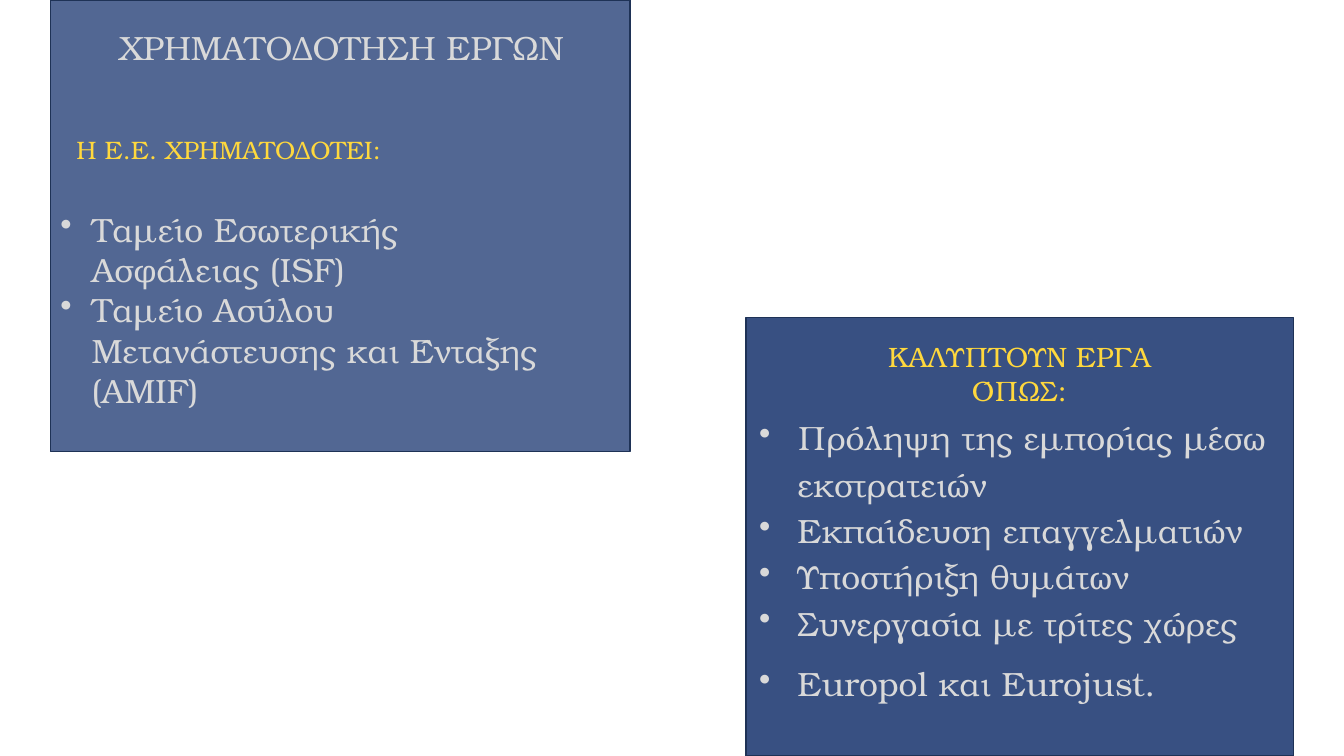
from lxml.etree import SubElement
from pptx import Presentation
from pptx.dml.color import RGBColor
from pptx.enum.shapes import MSO_SHAPE as Shape
from pptx.enum.text import MSO_AUTO_SIZE as AutoSize, PP_ALIGN as Align
from pptx.oxml.ns import qn
from pptx.util import Inches, Pt

COLOURS = {
    "panel": "002060",
    "border": "1E3256",
    "body": "D9D9D9",
    "heading": "FFD83D",
}
FONT = "TeX Gyre Bonum"
GRID = 100  # columns and rows across the slide

FUNDS = [
    "Ταμείο Εσωτερικής Ασφάλειας (ISF)",
    "Ταμείο Ασύλου Μετανάστευσης και Ένταξης (AMIF)",
]
PROJECTS = [
    "Πρόληψη της εμπορίας μέσω εκστρατειών",
    "Εκπαίδευση επαγγελματιών",
    "Υποστήριξη θυμάτων",
    "Συνεργασία με τρίτες χώρες",
    "Europol και Eurojust.",
]


def colour(name):
    return RGBColor.from_string(COLOURS[name])


def write(paragraph, text, size=24, tint="body", align=Align.LEFT,
          indent=None, line_spacing=None, space_after=0):
    """Fill a paragraph; an indent in inches also gives it a hanging bullet."""
    paragraph.alignment = align
    paragraph.space_after = Pt(space_after)
    if line_spacing:
        paragraph.line_spacing = line_spacing
    if indent:
        properties = paragraph._p.get_or_add_pPr()
        properties.set("marL", str(Inches(indent)))
        properties.set("indent", str(-Inches(indent)))
        SubElement(properties, qn("a:buChar"), char="•")
    run = paragraph.add_run()
    run.text = text
    run.font.name = FONT
    run.font.size = Pt(size)
    run.font.color.rgb = colour(tint)


class SlideBuilder:
    def __init__(self, presentation):
        self.slide = presentation.slides.add_slide(presentation.slide_layouts[6])
        self.column = presentation.slide_width / GRID
        self.row = presentation.slide_height / GRID

    def place(self, left, top, width, height):
        """Turn grid columns and rows into slide lengths."""
        return (round(left * self.column), round(top * self.row),
                round(width * self.column), round(height * self.row))

    def panel(self, *area, opacity):
        shape = self.slide.shapes.add_shape(Shape.RECTANGLE, *self.place(*area))
        shape.shadow.inherit = False
        shape.fill.solid()
        shape.fill.fore_color.rgb = colour("panel")
        fill_colour = shape._element.spPr.find(".//" + qn("a:srgbClr"))
        SubElement(fill_colour, qn("a:alpha"), val=str(opacity * 1000))
        shape.line.color.rgb = colour("border")
        shape.line.width = Pt(1)

    def text(self, *area, lines, spaced_from=None, **style):
        """Add a text box; lines from index spaced_from on have space after."""
        box = self.slide.shapes.add_textbox(*self.place(*area))
        frame = box.text_frame
        frame.word_wrap = True
        frame.auto_size = AutoSize.SHAPE_TO_FIT_TEXT
        for index, line in enumerate(lines):
            paragraph = frame.add_paragraph() if index else frame.paragraphs[0]
            spaced = spaced_from is not None and index >= spaced_from
            write(paragraph, line, space_after=10 if spaced else 0, **style)


def main():
    presentation = Presentation()
    presentation.slide_width = Inches(13.33)
    presentation.slide_height = Inches(7.5)
    builder = SlideBuilder(presentation)

    builder.panel(3.75, 0, 43.14, 59.73, opacity=68)
    builder.text(4.95, 2.93, 40.89, 6.67,
                 lines=["ΧΡΗΜΑΤΟΔΟΤΗΣΗ ΕΡΓΩΝ"], align=Align.CENTER)
    builder.text(4.95, 17.07, 26.41, 5.33,
                 lines=["Η Ε.Ε. ΧΡΗΜΑΤΟΔΟΤΕΙ:"], size=18, tint="heading")
    builder.text(3.75, 26.93, 36.98, 28.27, lines=FUNDS, indent=0.31)

    builder.panel(55.51, 42, 40.74, 58, opacity=78)
    builder.text(63.92, 44.27, 23.86, 10.27, lines=["ΚΑΛΥΠΤΟΥΝ ΕΡΓΑ ΌΠΩΣ:"],
                 size=20, tint="heading", align=Align.CENTER)
    builder.text(55.74, 53.73, 40.29, 48, lines=PROJECTS, spaced_from=3,
                 indent=0.38, line_spacing=1.15)

    presentation.save("out.pptx")


if __name__ == "__main__":
    main()
